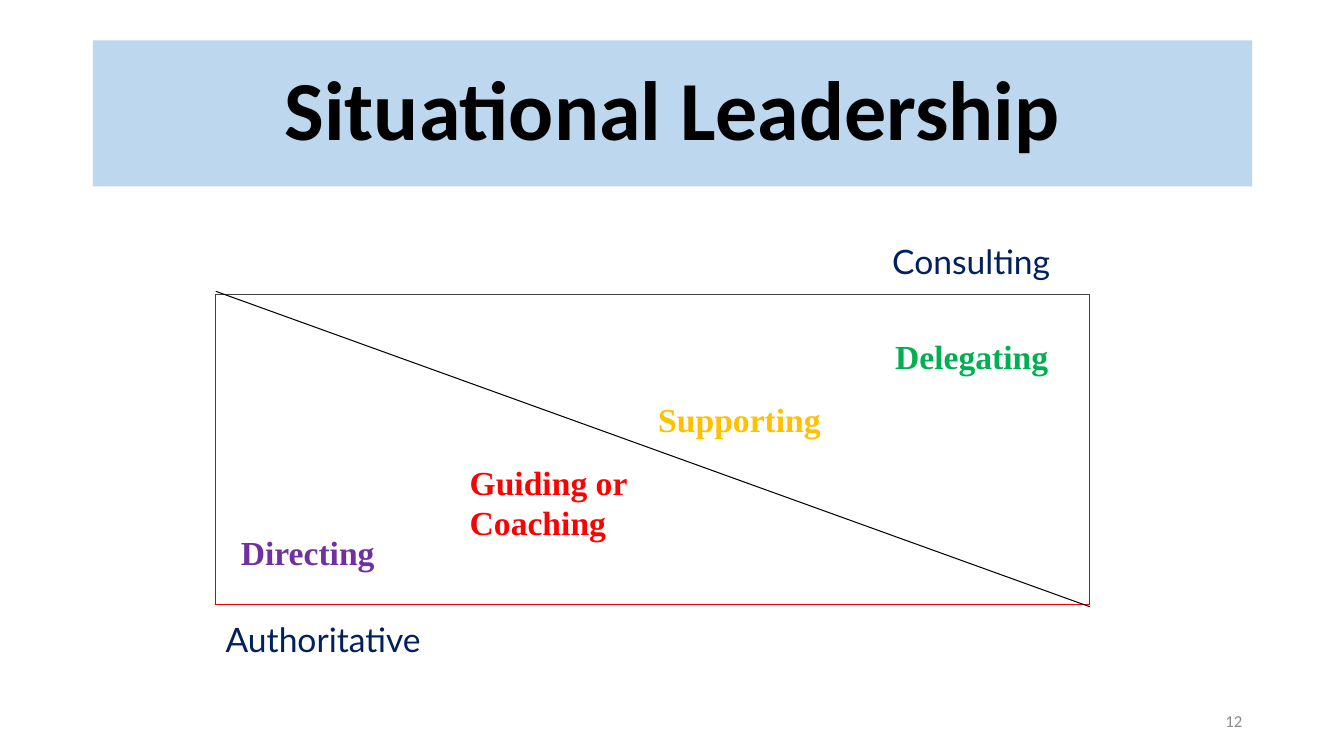
from pptx import Presentation
from pptx.dml.color import RGBColor
from pptx.enum.shapes import MSO_CONNECTOR, MSO_SHAPE
from pptx.enum.text import MSO_ANCHOR as Anchor, MSO_AUTO_SIZE as AutoSize, PP_ALIGN as Align
from pptx.oxml.ns import qn
from pptx.util import Inches, Pt
from lxml import etree

LEFT, TOP, WIDTH, HEIGHT = 2.14, 2.92, 8.67, 3.08
RIGHT, BOTTOM = LEFT + WIDTH, TOP + HEIGHT

AXIS_FORMAT = {"name": "Lato", "size": Pt(24), "bold": False}
STYLE_FORMAT = {"name": "Times New Roman", "size": Pt(24), "bold": True}
TITLE_FORMAT = {"name": "Calibri", "size": Pt(60), "bold": True}
NUMBER_FORMAT = {"name": "Calibri", "size": Pt(12), "bold": False}

LABELS = [
    ("Authoritative", (2.14, 6.09, 3.44, 0.51), "002060", AXIS_FORMAT),
    ("Consulting", (8.75, 2.34, 2.92, 0.5), "002060", AXIS_FORMAT),
    ("Directing", (2.29, 5.23, 1.72, 0.51), "7030A0", STYLE_FORMAT),
    ("Guiding or Coaching", (4.56, 4.53, 1.91, 0.91), "FF0000", STYLE_FORMAT),
    ("Supporting", (6.43, 3.91, 1.88, 0.51), "FFC000", STYLE_FORMAT),
    ("Delegating", (8.78, 3.28, 1.95, 0.51), "00B050", STYLE_FORMAT),
]


def rgb(color):
    return RGBColor.from_string(color)


def set_line(shape, color):
    shape.line.color.rgb = rgb(color)
    shape.line.width = Pt(0.75)


def write(shape, text, color, font_format, align=Align.LEFT, anchor=Anchor.TOP):
    frame = shape.text_frame
    frame.text = text
    frame.word_wrap = True
    frame.auto_size = AutoSize.NONE
    frame.vertical_anchor = anchor
    paragraph = frame.paragraphs[0]
    paragraph.alignment = align
    font = paragraph.runs[0].font
    for name, value in font_format.items():
        setattr(font, name, value)
    font.color.rgb = rgb(color)
    return paragraph


def add_label(slide, text, box, color, font_format, **layout):
    shape = slide.shapes.add_textbox(*map(Inches, box))
    write(shape, text, color, font_format, **layout)


def format_title(slide, text):
    title = slide.shapes.title
    title.left, title.top, title.width, title.height = map(Inches, (0.92, 0.4, 11.5, 1.45))
    title.fill.solid()
    title.fill.fore_color.rgb = rgb("BDD7EE")
    paragraph = write(title, text, "000000", TITLE_FORMAT, Align.CENTER, Anchor.MIDDLE)
    paragraph.line_spacing = 0.9


def add_frame(slide):
    """Red rectangle whose top and sides are overlaid in dark grey."""
    rectangle = slide.shapes.add_shape(
        MSO_SHAPE.RECTANGLE, *map(Inches, (LEFT, TOP, WIDTH, HEIGHT)))
    builder = slide.shapes.build_freeform(Inches(LEFT), Inches(BOTTOM))
    corners = [(LEFT, TOP), (RIGHT, TOP), (RIGHT, BOTTOM)]
    builder.add_line_segments([(Inches(x), Inches(y)) for x, y in corners], close=False)
    for shape, color in ((rectangle, "FF0000"), (builder.convert_to_shape(), "404040")):
        shape.shadow.inherit = False
        shape.fill.background()
        set_line(shape, color)


def add_diagonal(slide):
    diagonal = slide.shapes.add_connector(
        MSO_CONNECTOR.STRAIGHT, *map(Inches, (LEFT, 2.89, RIGHT, 6.02)))
    set_line(diagonal, "000000")
    etree.SubElement(diagonal._element.spPr, qn("a:effectLst"))


def main():
    presentation = Presentation()
    presentation.slide_width, presentation.slide_height = Inches(13.33), Inches(7.5)
    slide = presentation.slides.add_slide(presentation.slide_layouts[5])
    format_title(slide, "Situational Leadership")
    add_frame(slide)
    add_diagonal(slide)
    for label in LABELS:
        add_label(slide, *label)
    add_label(slide, "12", (9.42, 6.95, 3, 0.4), "8C8C8C", NUMBER_FORMAT,
              align=Align.RIGHT, anchor=Anchor.MIDDLE)
    presentation.save("out.pptx")


if __name__ == "__main__":
    main()
